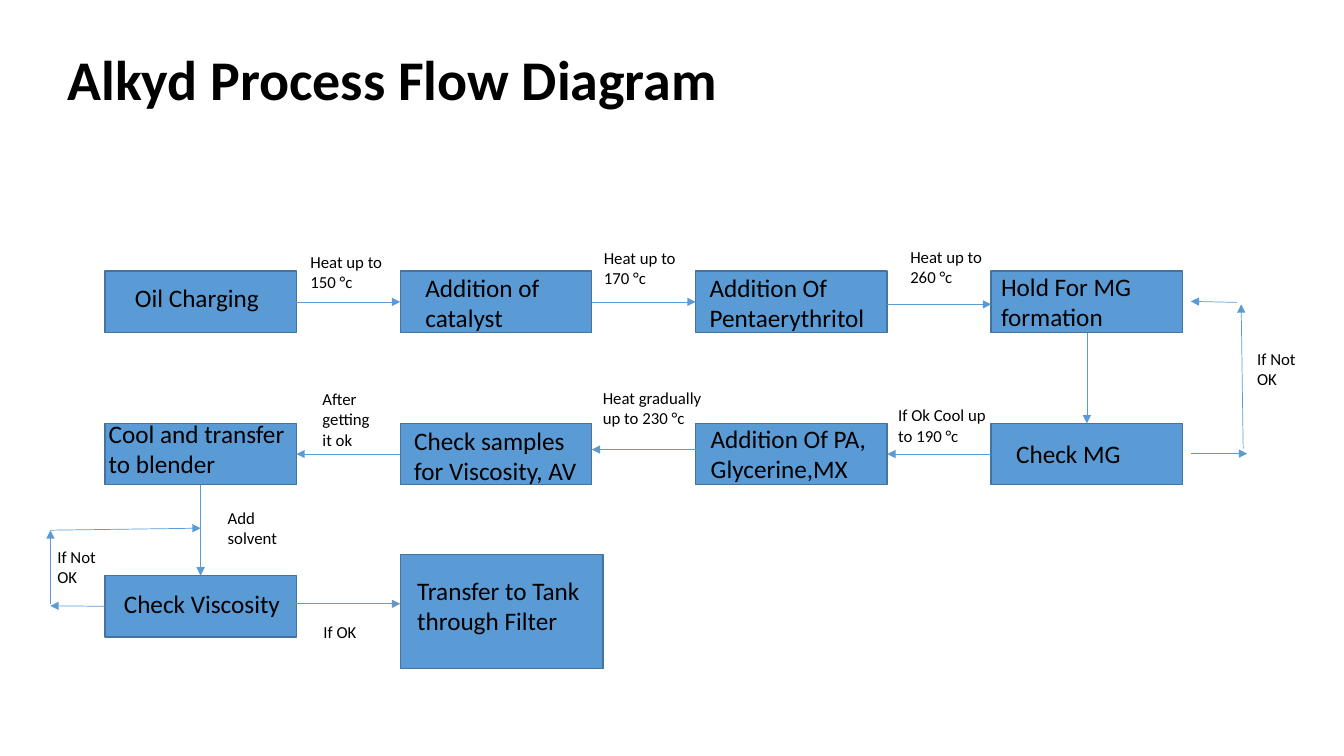
from lxml import etree
from pptx import Presentation
from pptx import util as u
from pptx.dml.color import RGBColor
from pptx.enum import shapes, text
from pptx.oxml.ns import qn

THEME = {
    "font": "Calibri",
    "ink": RGBColor.from_string("000000"),
    "fill": RGBColor.from_string("5B9BD5"),
    "edge": RGBColor.from_string("43739E"),
    "title": 40,
    "step": 18,
    "note": 12,
}

# Grid of steps, in inches
LEFT, TOP = 1.04, 2.69
COLUMN, ROW = 2.93, 1.51
BOX_WIDTH, BOX_HEIGHT = 1.9, 0.61

deck = Presentation()
deck.slide_width, deck.slide_height = u.Inches(13.33), u.Inches(7.5)
page = deck.slides.add_slide(deck.slide_layouts[6])


def write(words, left, top, width, height, size, bold=False):
    box = page.shapes.add_textbox(*map(u.Inches, (left, top, width, height)))
    box.text_frame.word_wrap = True
    box.text_frame.auto_size = text.MSO_AUTO_SIZE.SHAPE_TO_FIT_TEXT
    span = box.text_frame.paragraphs[0].add_run()
    span.text = words
    span.font.name = THEME["font"]
    span.font.size = u.Pt(size)
    span.font.bold = bold
    span.font.color.rgb = THEME["ink"]


def draw_arrow(x1, y1, x2, y2):
    arrow = page.shapes.add_connector(
        shapes.MSO_CONNECTOR.STRAIGHT, *map(u.Inches, (x1, y1, x2, y2)))
    arrow.line.color.rgb = THEME["fill"]
    arrow.line.width = u.Pt(0.5)
    etree.SubElement(arrow.line._get_or_add_ln(), qn("a:tailEnd"), type="triangle")
    etree.SubElement(arrow._element.spPr, qn("a:effectLst"))
    return arrow


# Title
write("Alkyd Process Flow Diagram", 0.57, 0.39, 9.01, 0.77, THEME["title"], True)

# Steps: column, row, words, then the text's offset, width and height
steps = {
    "oil": (0, 0, "Oil Charging", 0.2, 0.06, 1.98, 0.4),
    "catalyst": (1, 0, "Addition of catalyst", 0.15, -0.04, 1.98, 0.71),
    "penta": (2, 0, "Addition Of Pentaerythritol", 0.04, -0.04, 1.98, 0.71),
    "hold": (3, 0, "Hold For MG formation", 0, -0.05, 1.98, 0.71),
    "check mg": (3, 1, "Check MG", 0.15, 0.1, 1.98, 0.4),
    "glycerine": (2, 1, "Addition Of PA, Glycerine,MX", 0.05, -0.05, 1.98, 0.71),
    "samples": (1, 1, "Check samples for Viscosity, AV", 0.04, -0.03, 1.98, 0.71),
    "blender": (0, 1, "Cool and transfer to blender", -0.06, -0.1, 2.13, 0.71),
    "viscosity": (0, 2, "Check Viscosity", 0.09, 0.08, 1.98, 0.4),
    "tank": (1, 2, "Transfer to Tank through Filter", 0.07, -0.05, 2.1, 0.71),
}
boxes, corners = {}, {}
for name, (column, row, words, dx, dy, width, height) in steps.items():
    left, top = LEFT + column * COLUMN, TOP + row * ROW
    corners[name] = left, top
    outline = (left, top, BOX_WIDTH, BOX_HEIGHT)
    if name == "tank":
        outline = (left, top - 0.21, 2.01, 1.13)
    box = page.shapes.add_shape(
        shapes.MSO_SHAPE.RECTANGLE, *map(u.Inches, outline))
    box.shadow.inherit = False
    box.fill.solid()
    box.fill.fore_color.rgb = THEME["fill"]
    box.line.color.rgb = THEME["edge"]
    box.line.width = u.Pt(1)
    boxes[name] = box
    write(words, left + dx, top + dy, width, height, THEME["step"])

# Arrows between the middles of two sides (0 top, 1 left, 2 bottom, 3 right)
for start, start_side, end, end_side in [
    ("oil", 3, "catalyst", 1),
    ("catalyst", 3, "penta", 1),
    ("hold", 2, "check mg", 0),
    ("check mg", 1, "glycerine", 3),
    ("samples", 1, "blender", 3),
    ("blender", 2, "viscosity", 0),
]:
    arrow = draw_arrow(*corners[start], *corners[end])
    arrow.begin_connect(boxes[start], start_side)
    arrow.end_connect(boxes[end], end_side)

# Arrows off the middles, and the two return loops, as offsets from a step
for name, x1, y1, x2, y2 in [
    ("penta", BOX_WIDTH, 0.33, COLUMN, 0.33),
    ("glycerine", 0, 0.26, BOX_WIDTH - COLUMN, 0.26),
    ("viscosity", BOX_WIDTH, 0.28, COLUMN, 0.28),
    ("check mg", 1.98, 0.3, 2.54, 0.3),
    ("check mg", 2.5, 0.25, 2.48, -1.18),
    ("check mg", 2.44, -1.2, 1.98, -1.21),
    ("viscosity", 0, 0.3, -0.54, 0.3),
    ("viscosity", -0.54, 0.28, -0.54, -0.45),
    ("viscosity", -0.54, -0.45, BOX_WIDTH / 2, -0.47),
]:
    left, top = corners[name]
    arrow = draw_arrow(left + x1, top + y1, left + x2, top + y2)
    if name == "viscosity" and x1 == 0:
        arrow.begin_connect(boxes[name], 1)

# Conditions beside the arrows, as offsets from a step
for name, words, dx, dy, width, height in [
    ("oil", "Heat up to 150 °c", 1.94, -0.24, 1.06, 0.5),
    ("catalyst", "Heat up to 170 °c", 1.92, -0.28, 1.11, 0.5),
    ("penta", "Heat up to 260 °c", 2.03, -0.29, 1.2, 0.5),
    ("samples", "Heat gradually up to 230 °c", 1.91, -0.4, 1.18, 0.5),
    ("glycerine", "If Ok Cool up to 190 °c", 1.91, -0.23, 1.18, 0.5),
    ("check mg", "If Not OK", 2.54, -0.79, 0.75, 0.5),
    ("blender", "After getting it ok", 2.06, -0.39, 0.79, 0.71),
    ("blender", "Add solvent", 1.12, 0.79, 0.75, 0.5),
    ("viscosity", "If OK", 2.07, 0.41, 0.75, 0.3),
    ("viscosity", "If Not OK", -0.57, -0.34, 0.75, 0.5),
]:
    left, top = corners[name]
    write(words, left + dx, top + dy, width, height, THEME["note"])

deck.save("out.pptx")
